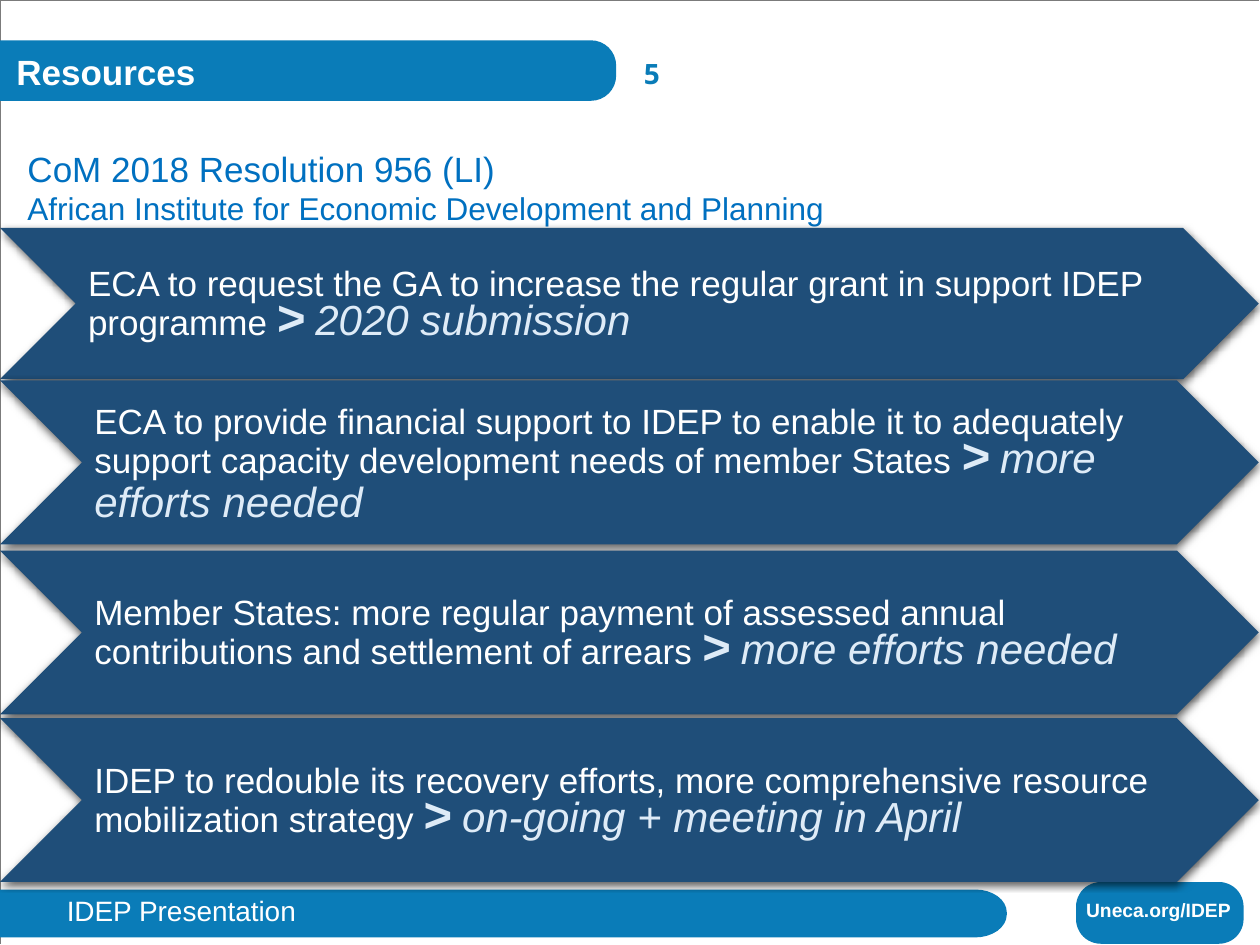
from math import cos, pi, sin

from lxml import etree
from pptx import Presentation
from pptx.dml.color import RGBColor
from pptx.enum.shapes import MSO_SHAPE
from pptx.enum.text import MSO_ANCHOR, MSO_AUTO_SIZE, PP_ALIGN
from pptx.oxml.ns import qn
from pptx.util import Inches, Pt

CHEVRON = MSO_SHAPE.CHEVRON
ROUND = MSO_SHAPE.ROUNDED_RECTANGLE
MIDDLE = MSO_ANCHOR.MIDDLE
GROW = MSO_AUTO_SIZE.SHAPE_TO_FIT_TEXT
LEFT = PP_ALIGN.LEFT

BLUE = RGBColor(0x0A, 0x7C, 0xB8)
HEAD = RGBColor(0x00, 0x70, 0xC0)
NAVY = RGBColor(0x1F, 0x4E, 0x79)
PALE = RGBColor(0xDE, 0xEB, 0xF7)
WHITE = RGBColor(0xFF, 0xFF, 0xFF)
GREY = RGBColor(0x7B, 0x7B, 0x7B)

BARS = [
    (0.32, 4.89, 0.48, 0.2, 0.2),
    (7.06, 7.99, 0.38, 0.25, 0.18),
]
BADGE = (8.54, 7, 1.33, 0.49)
LABELS = [
    ("Resources", (0.13, 0.4, 4.76, 0.34), dict(size=20, bold=True)),
    ("5", (5.11, 0.45, 0.6, 0.27),
     dict(size=16, bold=True, color=BLUE, face="Noto Sans")),
    ("IDEP Presentation", (0.53, 7.09, 7.58, 0.27), dict(size=16)),
    ("Uneca.org/IDEP", (8.62, 7.13, 1.17, 0.19), dict(size=11, bold=True)),
]
TITLE = [
    ("CoM 2018 Resolution 956 (LI)", 20),
    ("African Institute for Economic Development and Planning", 18),
]
STEPS = [
    (1.81, 1.2, "ECA to request the GA to increase the regular grant in "
     "support IDEP programme ", "2020 submission"),
    (3.02, 1.3, "ECA to provide financial support to IDEP to enable it to "
     "adequately support capacity development needs of member States ",
     "more efforts needed"),
    (4.37, 1.3, "Member States: more regular payment of assessed annual "
     "contributions and settlement of arrears ", "more efforts needed"),
    (5.7, 1.3, "IDEP to redouble its recovery efforts, more comprehensive "
     "resource mobilization strategy ", "on-going + meeting in April"),
]

deck = Presentation()
deck.slide_width, deck.slide_height = Inches(10), Inches(7.5)
slide = deck.slides.add_slide(deck.slide_layouts[6])
shapes = slide.shapes


def write(para, text, size=20, color=WHITE, bold=False, italic=False,
          face="Arial"):
    run = para.add_run()
    run.text = text
    font = run.font
    font.name, font.size = face, Pt(size)
    font.bold, font.italic = bold, italic
    font.color.rgb = color


def paint(shape, color):
    shape.shadow.inherit = False
    shape.fill.solid()
    shape.fill.fore_color.rgb = color
    shape.line.fill.background()


def trace(points, close):
    spots = [(Inches(x), Inches(y)) for x, y in points]
    form = shapes.build_freeform(*spots[0])
    form.add_line_segments(spots[1:], close=close)
    return form.convert_to_shape()


def bar(top, width, height, rx, ry):
    turns = [pi / 2 * i / 8 for i in range(9)]
    upper = [(width - rx + rx * sin(t), top + ry - ry * cos(t)) for t in turns]
    lower = [(x, 2 * top + height - y) for x, y in reversed(upper)]
    points = [(0, top), *upper, *lower, (0, top + height)]
    paint(trace(points, True), BLUE)


def box(spot, inset=None):
    frame = shapes.add_textbox(*map(Inches, spot)).text_frame
    frame.word_wrap = True
    frame.auto_size = GROW
    if inset is not None:
        frame.margin_left = frame.margin_right = Inches(inset)
        frame.margin_top = frame.margin_bottom = Inches(inset)
    return frame


def shade(shape):
    effects = shape._element.spPr.find(qn("a:effectLst"))
    outer = etree.SubElement(effects, qn("a:outerShdw"), blurRad=str(Pt(4.5)),
                             dist=str(Pt(1.5)), dir="5400000", rotWithShape="0")
    tint = etree.SubElement(outer, qn("a:srgbClr"), val="000000")
    etree.SubElement(tint, qn("a:alpha"), val="63000")


def step(top, height, task, state):
    arrow = shapes.add_shape(CHEVRON, 0, Inches(top), Inches(9.99),
                             Inches(height))
    paint(arrow, NAVY)
    shade(arrow)
    frame = arrow.text_frame
    frame.word_wrap = True
    frame.vertical_anchor = MIDDLE
    para = frame.paragraphs[0]
    para.alignment = LEFT
    para.line_spacing = Pt(24)
    write(para, task)
    write(para, ">", size=28, color=PALE, bold=True)
    write(para, " ")
    write(para, state, size=24, color=PALE, italic=True)


edge = trace([(0, 7.49), (0, 0), (9.99, 0)], False)
edge.shadow.inherit = False
edge.fill.background()
edge.line.color.rgb = GREY
edge.line.width = Pt(0.25)

for row in BARS:
    bar(*row)
badge = shapes.add_shape(ROUND, *map(Inches, BADGE))
badge.adjustments[0] = 0.4
paint(badge, BLUE)

for text, spot, style in LABELS:
    write(box(spot, 0).paragraphs[0], text, **style)

frame = box((0.12, 1.12, 10.1, 0.74))
for i, (text, size) in enumerate(TITLE):
    para = frame.add_paragraph() if i else frame.paragraphs[0]
    write(para, text, size=size, color=HEAD)

for row in STEPS:
    step(*row)

deck.save("out.pptx")
